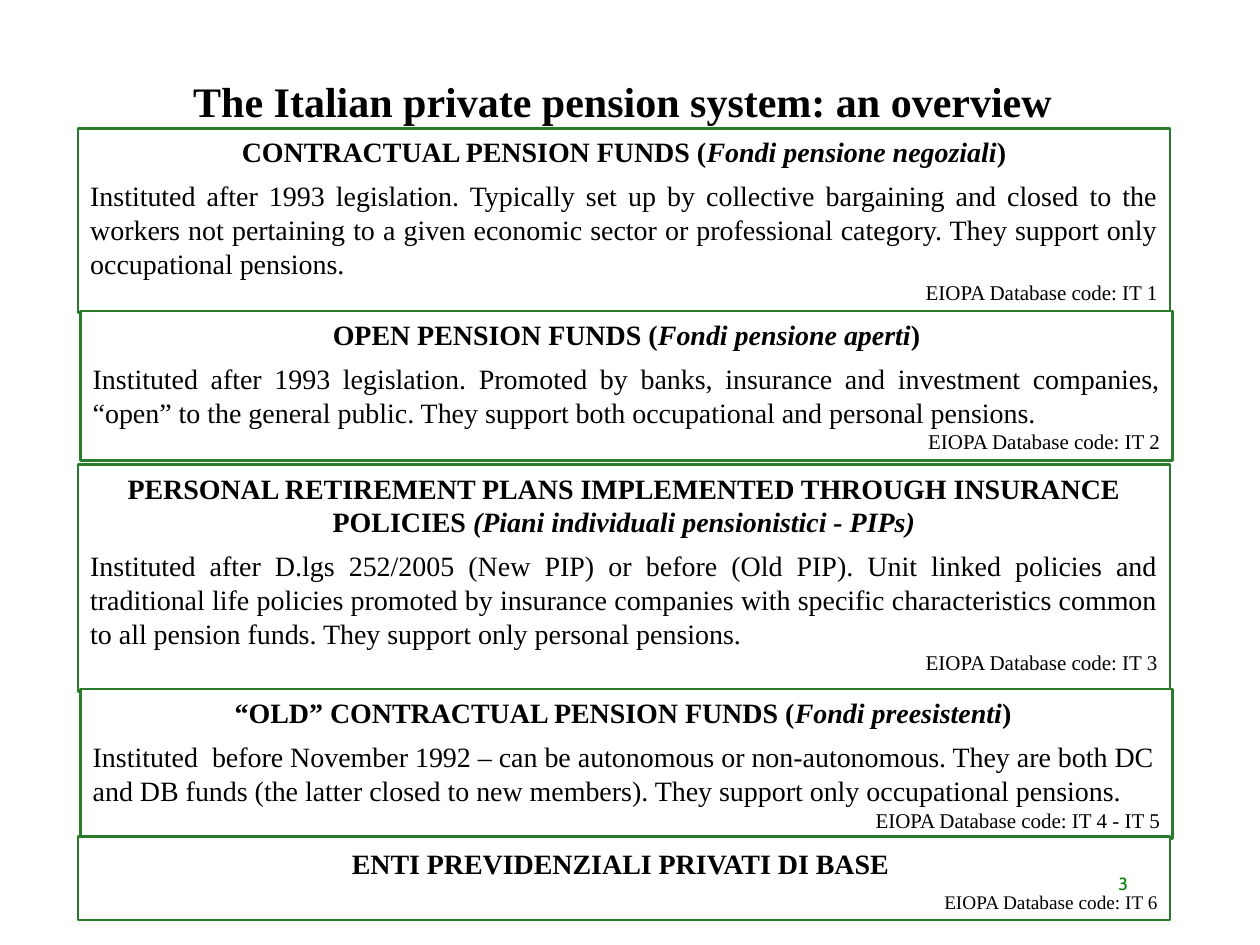
from dataclasses import dataclass

import pptx
import pptx.dml.color
import pptx.enum.shapes
import pptx.enum.text
import pptx.util
from pptx.enum.text import MSO_ANCHOR, PP_ALIGN
from pptx.util import Cm


@dataclass(frozen=True)
class Theme:
    """Colours, typefaces and type sizes."""
    ink: str = "000000"
    paper: str = "FFFFFF"
    border: str = "2B7B2D"
    number: str = "008000"
    serif: str = "Times New Roman"
    sans: str = "Cabin"
    title_size: float = 24
    body_size: float = 16
    code_size: float = 12
    last_code_size: float = 11
    number_size: float = 10
    border_width: float = 1.5
    gap: float = 6


@dataclass(frozen=True)
class Fund:
    """One bordered box describing a type of pension fund."""
    left: float
    top: float
    height: float
    heading: str
    italic: str
    closing: str
    body: str
    code: str
    anchor: MSO_ANCHOR = MSO_ANCHOR.TOP
    body_align: PP_ALIGN = PP_ALIGN.JUSTIFY


THEME = Theme()
LEFT, INDENTED_LEFT, BOX_WIDTH = 1.57, 1.62, 22.02

FUNDS = [
    Fund(LEFT, 2.59, 3.71, "CONTRACTUAL PENSION FUNDS (", "Fondi pensione negoziali", ")",
         "Instituted after 1993 legislation. Typically set up by collective bargaining and closed "
         "to the workers not pertaining to a given economic sector or professional category. "
         "They support only occupational pensions.", "IT 1"),
    Fund(INDENTED_LEFT, 6.27, 3.02, "OPEN PENSION FUNDS (", "Fondi pensione aperti", ")",
         "Instituted after 1993 legislation. Promoted by banks, insurance and investment companies, "
         "“open” to the general public. They support both occupational and personal pensions.",
         "IT 2"),
    Fund(LEFT, 9.37, 4.57, "PERSONAL RETIREMENT PLANS IMPLEMENTED THROUGH INSURANCE POLICIES ",
         "(Piani individuali pensionistici - PIPs)", "",
         "Instituted after D.lgs 252/2005 (New PIP) or before (Old PIP). Unit linked policies and "
         "traditional life policies promoted by insurance companies with specific characteristics "
         "common to all pension funds. They support only personal pensions.", "IT 3"),
    Fund(INDENTED_LEFT, 13.89, 3.02, "“OLD” CONTRACTUAL PENSION FUNDS (", "Fondi preesistenti", ") ",
         "Instituted  before November 1992 – can be autonomous or non-autonomous. They are both DC "
         "and DB funds (the latter closed to new members). They support only occupational pensions.",
         "IT 4 - IT 5", MSO_ANCHOR.BOTTOM, PP_ALIGN.LEFT),
    Fund(LEFT, 16.87, 1.68, "ENTI PREVIDENZIALI PRIVATI DI BASE ", "", "", "", "IT 6",
         MSO_ANCHOR.BOTTOM),
]


def colour(value: str) -> pptx.dml.color.RGBColor:
    """Turn a hexadecimal value into a colour."""
    return pptx.dml.color.RGBColor.from_string(value)


def place(shape, left: float, top: float, width: float, height: float) -> None:
    """Move and size a shape in centimetres."""
    shape.left, shape.top, shape.width, shape.height = map(Cm, (left, top, width, height))


def prepare_frame(frame, anchor: MSO_ANCHOR) -> None:
    """Set wrapping, fixed size, insets and vertical anchor."""
    frame.word_wrap = True
    frame.auto_size = pptx.enum.text.MSO_AUTO_SIZE.NONE
    frame.vertical_anchor = anchor
    frame.margin_left = frame.margin_right = Cm(0.25)
    frame.margin_top = frame.margin_bottom = Cm(0.13)


def format_para(para, align: PP_ALIGN, size: float, bold: bool = False, before: float = 0,
                name: str = THEME.serif, ink: str = THEME.ink) -> None:
    """Set the alignment, spacing and font of a paragraph."""
    para.alignment = align
    para.space_before = pptx.util.Pt(before)
    para.line_spacing = 1.0
    para.font.name = name
    para.font.size = pptx.util.Pt(size)
    para.font.bold = bold
    para.font.color.rgb = colour(ink)


def add_fund(page, fund: Fund) -> None:
    """Draw a fund box with its heading, description and database code."""
    box = page.shapes.add_shape(pptx.enum.shapes.MSO_SHAPE.RECTANGLE, 0, 0, 0, 0)
    place(box, fund.left, fund.top, BOX_WIDTH, fund.height)
    box.shadow.inherit = False
    box.fill.solid()
    box.fill.fore_color.rgb = colour(THEME.paper)
    box.line.color.rgb = colour(THEME.border)
    box.line.width = pptx.util.Pt(THEME.border_width)
    frame = box.text_frame
    prepare_frame(frame, fund.anchor)

    heading = frame.paragraphs[0]
    format_para(heading, PP_ALIGN.CENTER, THEME.body_size, bold=True)
    for text, italic in ((fund.heading, False), (fund.italic, True), (fund.closing, False)):
        if text:
            span = heading.add_run()
            span.text = text
            span.font.italic = italic

    if fund.body:
        body = frame.add_paragraph()
        body.text = fund.body
        format_para(body, fund.body_align, THEME.body_size, before=THEME.gap)

    code = frame.add_paragraph()
    code.text = f"EIOPA Database code: {fund.code}"
    size, before = (THEME.code_size, 0) if fund.body else (THEME.last_code_size, THEME.gap)
    format_para(code, PP_ALIGN.RIGHT, size, before=before)


def add_title(page, text: str) -> None:
    """Fill and format the title placeholder."""
    title = page.shapes.title
    place(title, 2.39, 1.4, 20.32, 1.27)
    title.text_frame.text = text
    prepare_frame(title.text_frame, MSO_ANCHOR.BOTTOM)
    format_para(title.text_frame.paragraphs[0], PP_ALIGN.CENTER, THEME.title_size, bold=True)


def add_page_number(page, number: int) -> None:
    """Write the page number at the lower right."""
    box = page.shapes.add_textbox(0, 0, 0, 0)
    place(box, 19.43, 17.3, 3.56, 1.02)
    prepare_frame(box.text_frame, MSO_ANCHOR.MIDDLE)
    para = box.text_frame.paragraphs[0]
    para.text = str(number)
    format_para(para, PP_ALIGN.RIGHT, THEME.number_size, name=THEME.sans, ink=THEME.number)


def main() -> None:
    """Build the pension system slide."""
    deck = pptx.Presentation()
    deck.slide_width, deck.slide_height = Cm(25.4), Cm(19.05)
    page = deck.slides.add_slide(deck.slide_layouts[5])
    add_title(page, "The Italian private pension system: an overview")
    for fund in FUNDS:
        add_fund(page, fund)
    add_page_number(page, 3)
    deck.save("out.pptx")


if __name__ == "__main__":
    main()
